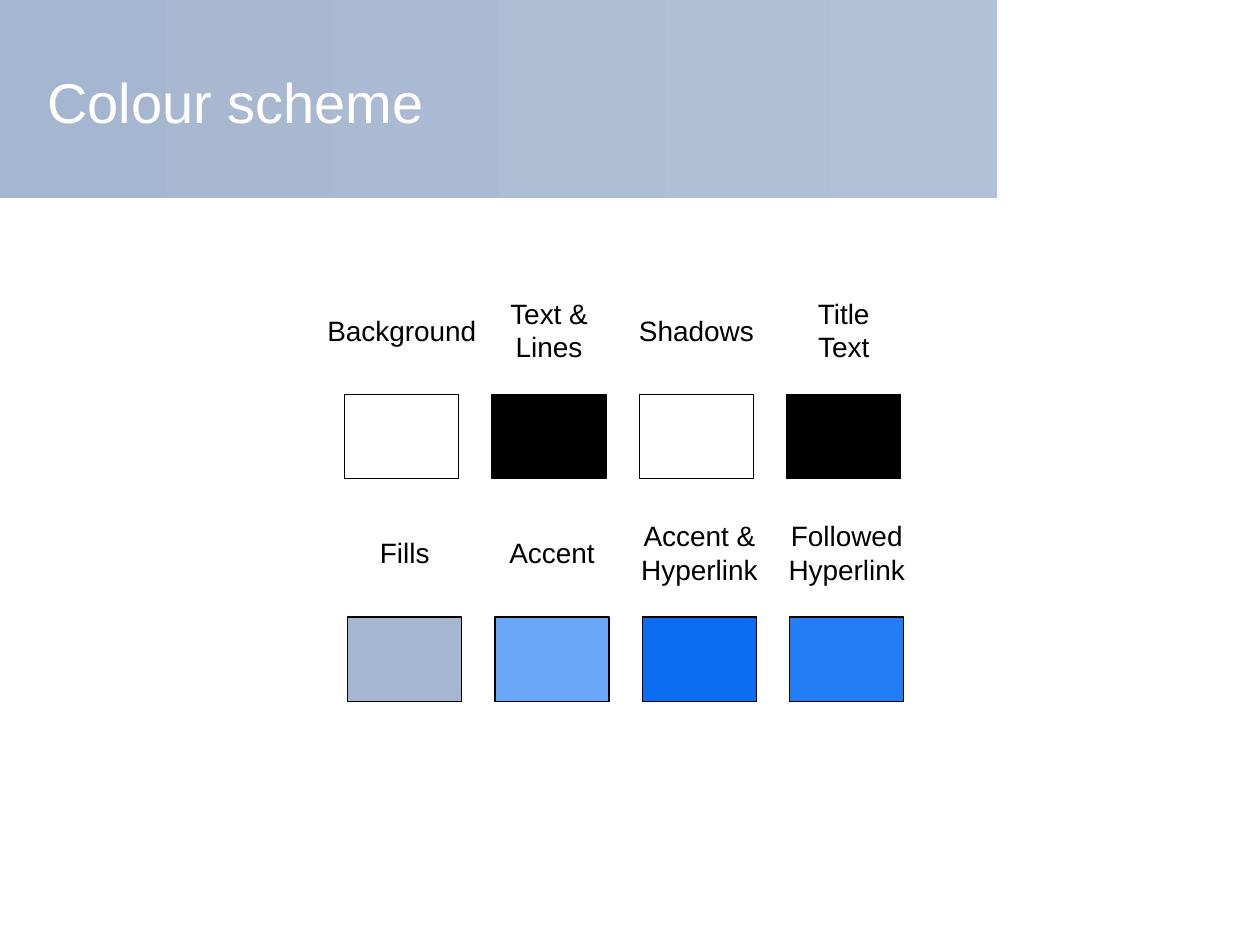
from pptx import Presentation
from pptx.dml.color import RGBColor
from pptx.enum.shapes import MSO_SHAPE
from pptx.enum.text import MSO_ANCHOR, MSO_AUTO_SIZE, PP_ALIGN
from pptx.util import Cm, Pt

RECTANGLE = MSO_SHAPE.RECTANGLE
MIDDLE = MSO_ANCHOR.MIDDLE
GROW = MSO_AUTO_SIZE.SHAPE_TO_FIT_TEXT
NO_GROW = MSO_AUTO_SIZE.NONE
LEFT, CENTER = PP_ALIGN.LEFT, PP_ALIGN.CENTER

FONT = "Arial"
BLACK, WHITE = "000000", "FFFFFF"
TITLE = "Colour scheme"
BANNER_COLOURS = ("A5B6D0", "B2C1D7")

ROWS = [
    {"left": 6.95, "top": 7.95, "swatches": [
        (["Background"], 3.55, "FFFFFF"),
        (["Text &", "Lines"], 2.15, "000000"),
        (["Shadows"], 2.85, "FFFFFF"),
        (["Title\nText"], 1.62, "000000"),
    ]},
    {"left": 7.01, "top": 12.44, "swatches": [
        (["Fills"], 1.52, "A5B6D0"),
        (["Accent"], 2.26, "6BA7F8"),
        (["Accent &", "Hyperlink"], 2.92, "0B6DEF"),
        (["Followed", "Hyperlink"], 2.92, "237DF5"),
    ]},
]
SWATCH_WIDTH, SWATCH_HEIGHT = 2.3, 1.7
COLUMN_PITCH = 2.97
LABEL_RISE = 1.3
LINE_HEIGHT, LABEL_PADDING = 0.69, 0.25


def colour(value):
    return RGBColor.from_string(value)


def add_rectangle(slide, left, top, width, height):
    shape = slide.shapes.add_shape(RECTANGLE, Cm(left), Cm(top), Cm(width), Cm(height))
    shape.shadow.inherit = False
    return shape


def add_text(slide, box, paragraphs, size, text_colour, alignment, wrap):
    shape = slide.shapes.add_textbox(*(Cm(length) for length in box))
    frame = shape.text_frame
    frame.word_wrap = wrap
    frame.auto_size = NO_GROW if wrap else GROW
    frame.vertical_anchor = MIDDLE
    for index, text in enumerate(paragraphs):
        paragraph = frame.add_paragraph() if index else frame.paragraphs[0]
        paragraph.alignment = alignment
        for number, line in enumerate(text.split("\n")):
            if number:
                paragraph.add_line_break()
            run = paragraph.add_run()
            run.text = line
            run.font.name = FONT
            run.font.size = Pt(size)
            run.font.color.rgb = colour(text_colour)


def add_banner(slide):
    banner = add_rectangle(slide, 0, 0, 20.11, 4)
    banner.line.fill.background()
    banner.fill.gradient()
    banner.fill.gradient_angle = 0
    for stop, value in zip(banner.fill.gradient_stops, BANNER_COLOURS):
        stop.color.rgb = colour(value)
    add_text(slide, (0.7, 0.76, 19, 2.57), [TITLE], 32, WHITE, LEFT, True)


def add_swatch(slide, left, top, label, label_width, fill):
    swatch = add_rectangle(slide, left, top, SWATCH_WIDTH, SWATCH_HEIGHT)
    swatch.fill.solid()
    swatch.fill.fore_color.rgb = colour(fill)
    swatch.line.color.rgb = colour(BLACK)
    swatch.line.width = Pt(0.75)

    line_count = len("\n".join(label).split("\n"))
    label_height = line_count * LINE_HEIGHT + LABEL_PADDING
    label_left = left + (SWATCH_WIDTH - label_width) / 2
    label_top = top - LABEL_RISE - label_height / 2
    box = (label_left, label_top, label_width, label_height)
    add_text(slide, box, label, 16, BLACK, CENTER, False)


def main():
    presentation = Presentation()
    presentation.slide_width = Cm(25.4)
    presentation.slide_height = Cm(19.05)
    slide = presentation.slides.add_slide(presentation.slide_layouts[6])
    add_banner(slide)
    for row in ROWS:
        for column, (label, label_width, fill) in enumerate(row["swatches"]):
            left = row["left"] + column * COLUMN_PITCH
            add_swatch(slide, left, row["top"], label, label_width, fill)
    presentation.save("out.pptx")


if __name__ == "__main__":
    main()
